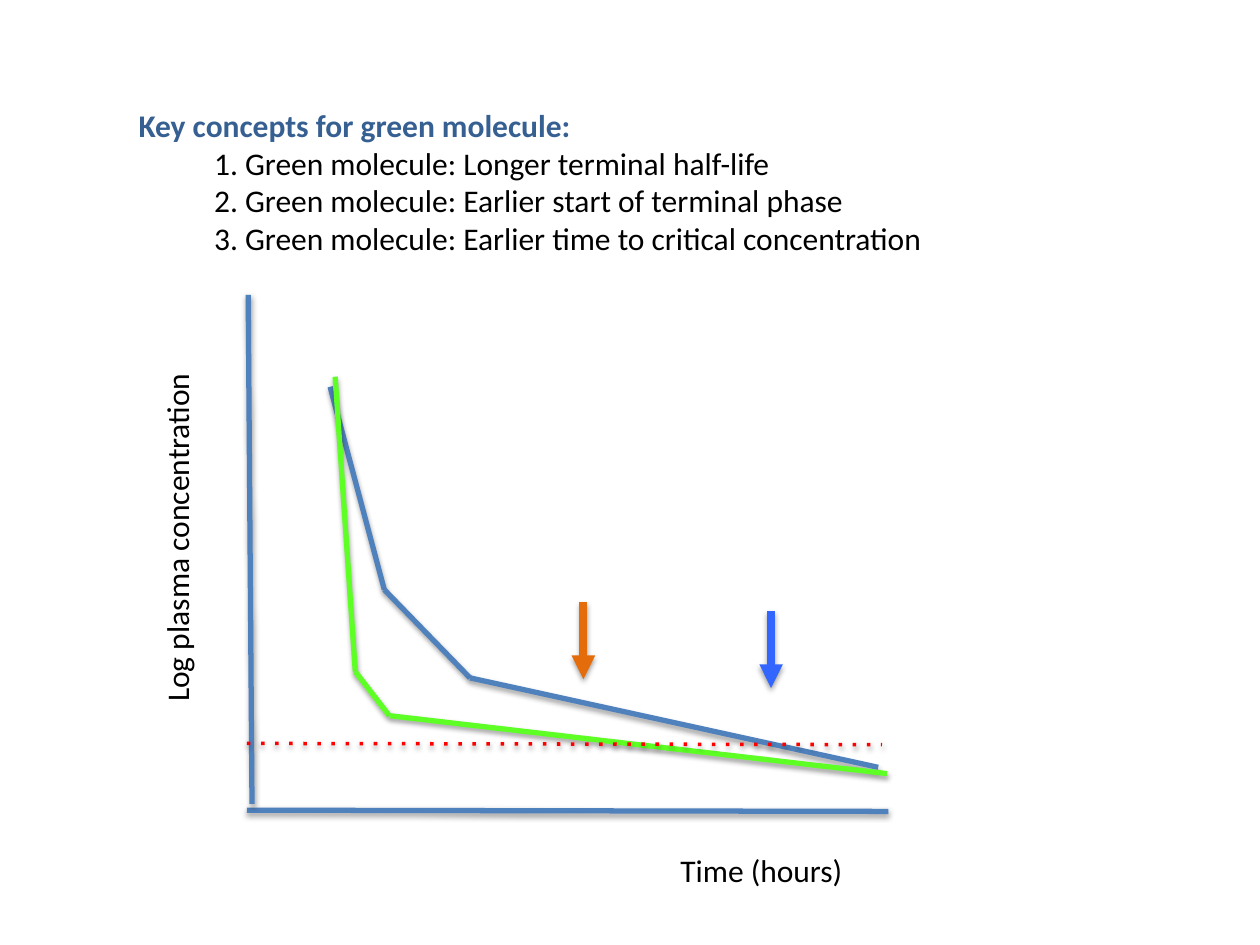
from itertools import pairwise

from lxml import etree
from pptx import Presentation
from pptx.dml.color import RGBColor
from pptx.enum.shapes import MSO_CONNECTOR
from pptx.enum.text import MSO_AUTO_SIZE
from pptx.oxml.ns import qn
from pptx.util import Inches, Pt

STRAIGHT = MSO_CONNECTOR.STRAIGHT
GROW = MSO_AUTO_SIZE.SHAPE_TO_FIT_TEXT

THEME = {
    "font": "Calibri", "size": 18,
    "text": "000000", "head": "376092",
    "blue": "4F81BD", "green": "5DFF24", "limit": "FF0000",
    "early": "E46C0A", "late": "3366FF", "shadow": "000000",
    "curve": 3, "dots": 2, "arrow": 4.5,
}

# Content
HEAD = "Key concepts for green molecule:"
POINTS = [
    "1. Green molecule: Longer terminal half-life",
    "2. Green molecule: Earlier start of terminal phase",
    "3. Green molecule: Earlier time to critical concentration",
]
LABELS = [  # text, box, rotation
    ("Time (hours)", (5.28, 6.69, 1.54, 0.42), 0),
    ("Log plasma concentration", (-0.04, 4.04, 2.88, 0.42), 270),
]
PATHS = [  # colour, points joined in order
    ("blue", [(1.96, 6.43), (7.05, 6.44)]),
    ("blue", [(1.97, 2.34), (2, 6.38)]),
    ("blue", [(2.62, 3.07), (3.05, 4.68), (3.73, 5.38), (6.97, 6.09)]),
    ("green", [(2.66, 2.99), (2.82, 5.33), (3.09, 5.68), (7.04, 6.14)]),
]
LIMIT = [(1.96, 5.9), (7, 5.91)]
ARROWS = [("early", 4.63, 4.78), ("late", 6.12, 4.85)]
DROP = 0.61
INDENT = 0.6


def paint(key):
    return RGBColor.from_string(THEME[key])


def add_sub(parent, tag, **attrs):
    return etree.SubElement(parent, qn(tag), attrs)


def add_line(slide, start, end, color, width, dash=None, tip=None):
    ends = [Inches(v) for v in (*start, *end)]
    line = slide.shapes.add_connector(STRAIGHT, *ends)
    line.line.color.rgb = paint(color)
    line.line.width = Pt(THEME[width])
    stroke = line.line._get_or_add_ln()
    if dash:
        add_sub(stroke, "a:prstDash", val=dash)
    if tip:
        add_sub(stroke, "a:tailEnd", type=tip)
    # Soft shadow straight below the line
    effects = add_sub(line._element.spPr, "a:effectLst")
    shade = add_sub(effects, "a:outerShdw", blurRad=str(Pt(3.1)),
                    dist=str(Pt(1.6)), dir="5400000", rotWithShape="0")
    tint = add_sub(shade, "a:srgbClr", val=THEME["shadow"])
    add_sub(tint, "a:alpha", val="38000")


def add_box(slide, box, wrap=False):
    shape = slide.shapes.add_textbox(*[Inches(v) for v in box])
    frame = shape.text_frame
    frame.word_wrap = wrap
    frame.auto_size = GROW
    frame.margin_left = frame.margin_right = Inches(0.12)
    frame.margin_top = frame.margin_bottom = Inches(0.06)
    return shape


def add_run(para, text, color="text", bold=False):
    run = para.add_run()
    run.text = text
    run.font.name = THEME["font"]
    run.font.size = Pt(THEME["size"])
    run.font.bold = bold
    run.font.color.rgb = paint(color)


def main():
    prs = Presentation()
    prs.slide_width, prs.slide_height = Inches(10), Inches(7.5)
    slide = prs.slides.add_slide(prs.slide_layouts[6])

    # Axes and concentration curves
    for color, points in PATHS:
        for start, end in pairwise(points):
            add_line(slide, start, end, color, "curve")

    # Axis labels
    for text, box, turn in LABELS:
        shape = add_box(slide, box)
        shape.rotation = turn
        add_run(shape.text_frame.paragraphs[0], text)

    # Critical concentration
    add_line(slide, *LIMIT, "limit", "dots", dash="dot")

    # Key concepts
    frame = add_box(slide, (0.98, 0.78, 6.54, 1.33), wrap=True).text_frame
    add_run(frame.paragraphs[0], HEAD, "head", True)
    for text in POINTS:
        para = frame.add_paragraph()
        para._p.get_or_add_pPr().set("marL", str(Inches(INDENT)))
        add_run(para, text)

    # Arrows at the critical times
    for color, x, top in ARROWS:
        add_line(slide, (x, top), (x, top + DROP), color, "arrow",
                 tip="triangle")

    prs.save("out.pptx")


if __name__ == "__main__":
    main()
